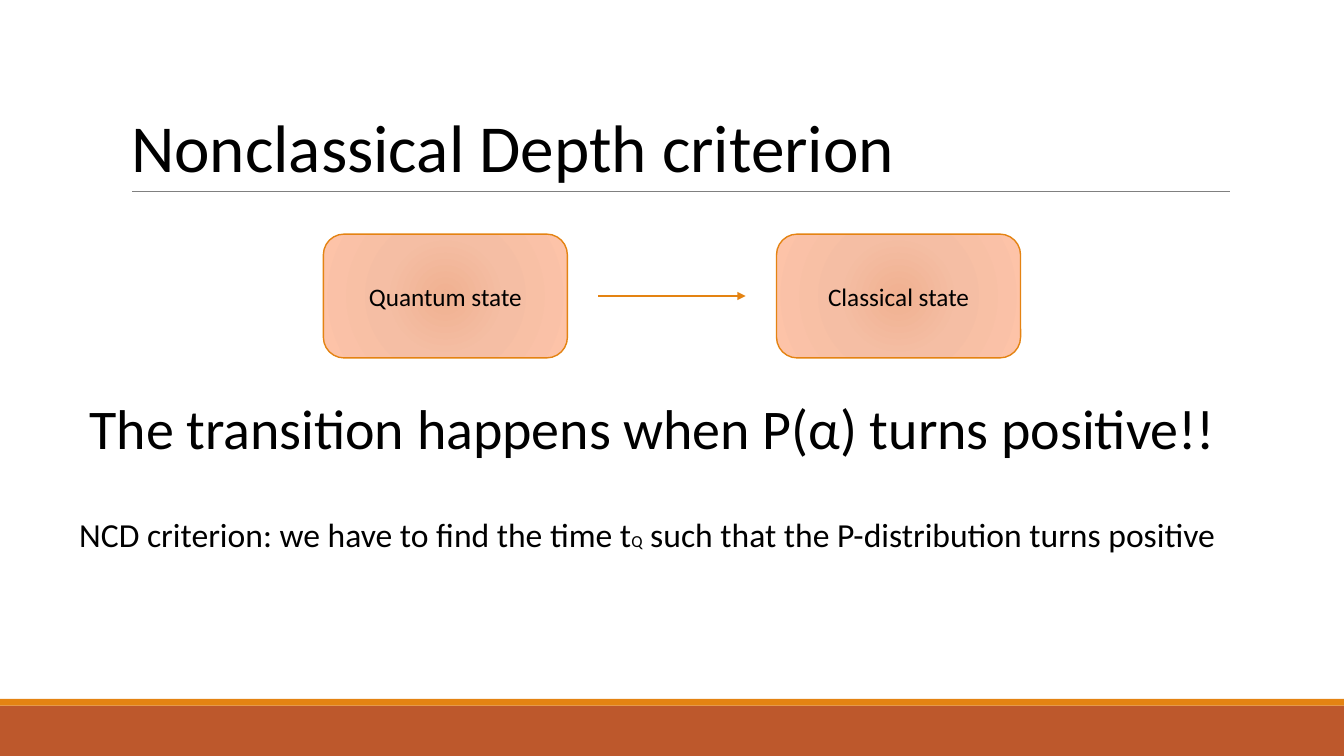
"""Build the slide on the nonclassical depth criterion."""
from pptx import Presentation
from pptx.dml.color import RGBColor
from pptx.enum.shapes import MSO_CONNECTOR, MSO_SHAPE
from pptx.enum.text import MSO_ANCHOR, PP_ALIGN
from pptx.oxml import parse_xml
from pptx.oxml.ns import nsdecls, qn
from pptx.oxml.xmlchemy import OxmlElement
from pptx.util import Cm, Pt

TITLE = "Nonclassical Depth criterion"
STATES = ["Quantum state", "Classical state"]
STATEMENTS = [
    ((1.9, 9.8, 29.09, 1.96), True,
     [("The transition happens when P(α) turns positive!!", 40)]),
    ((1.63, 12.83, 29.36, 1.27), False,
     [("NCD criterion: we have to find the time t", 24),
      ("Q", 12),
      (" such that the P-distribution turns positive", 24)]),
]

BLACK = RGBColor(0x00, 0x00, 0x00)
GRAY = RGBColor(0x80, 0x80, 0x80)
ORANGE = RGBColor(0xE4, 0x83, 0x12)
RUST = RGBColor(0xBD, 0x58, 0x2C)
GLOW = [(0, RGBColor(0xF0, 0xB1, 0x91)),
        (45, RGBColor(0xF5, 0xBE, 0xA4)),
        (100, RGBColor(0xFD, 0xC3, 0xA8))]
FONT = "Calibri"

WIDTH, HEIGHT = 33.87, 19.05
FOOTER_TOP, STRIPE_HEIGHT = 17.78, 0.17
STATE_LEFT, STATE_TOP, STATE_WIDTH, STATE_HEIGHT = 8.15, 5.9, 6.15, 3.12
STATE_STEP, ARROW_GAP = 11.42, 0.78


def add_text(para, text, size):
    """Add one run of text to a paragraph."""
    span = para.add_run()
    span.text = text
    span.font.name = FONT
    span.font.size = Pt(size)
    span.font.color.rgb = BLACK


def add_bar(slide, top, height, color):
    """Add a full-width bar."""
    bar = slide.shapes.add_shape(
        MSO_SHAPE.RECTANGLE, 0, Cm(top), Cm(WIDTH), Cm(height))
    bar.shadow.inherit = False
    bar.fill.solid()
    bar.fill.fore_color.rgb = color
    bar.line.fill.background()


def add_line(slide, left, right, height, color, weight):
    """Add a horizontal line without a shadow."""
    line = slide.shapes.add_connector(
        MSO_CONNECTOR.STRAIGHT, Cm(left), Cm(height), Cm(right), Cm(height))
    line.line.color.rgb = color
    line.line.width = Pt(weight)
    line._element.spPr.append(OxmlElement("a:effectLst"))
    return line


def add_state(slide, left, name):
    """Add a rounded box with a radial gradient."""
    box = slide.shapes.add_shape(
        MSO_SHAPE.ROUNDED_RECTANGLE, Cm(left), Cm(STATE_TOP),
        Cm(STATE_WIDTH), Cm(STATE_HEIGHT))
    box.shadow.inherit = False
    box.line.color.rgb = ORANGE
    box.line.width = Pt(1)
    box.fill.gradient()
    stops = "".join(
        f'<a:gs pos="{place * 1000}"><a:srgbClr val="{color}"/></a:gs>'
        for place, color in GLOW)
    properties = box._element.spPr
    properties.replace(properties.find(qn("a:gradFill")), parse_xml(
        f'<a:gradFill {nsdecls("a")} rotWithShape="1"><a:gsLst>{stops}</a:gsLst>'
        '<a:path path="circle"><a:fillToRect l="100000" t="100000" '
        'r="100000" b="100000"/></a:path></a:gradFill>'))
    box.text_frame.vertical_anchor = MSO_ANCHOR.MIDDLE
    para = box.text_frame.paragraphs[0]
    para.alignment = PP_ALIGN.CENTER
    add_text(para, name, 18)


def add_statement(slide, place, wraps, spans):
    """Add a centred line of text."""
    box = slide.shapes.add_textbox(*map(Cm, place))
    box.text_frame.word_wrap = wraps
    para = box.text_frame.paragraphs[0]
    para.alignment = PP_ALIGN.CENTER
    for text, size in spans:
        add_text(para, text, size)


def main():
    """Lay out the slide and save the deck."""
    deck = Presentation()
    deck.slide_width, deck.slide_height = Cm(WIDTH), Cm(HEIGHT)
    slide = deck.slides.add_slide(deck.slide_layouts[5])

    add_bar(slide, FOOTER_TOP, HEIGHT - FOOTER_TOP, RUST)
    add_bar(slide, FOOTER_TOP - STRIPE_HEIGHT, STRIPE_HEIGHT, ORANGE)
    add_line(slide, 3.33, 31, 4.82, GRAY, 0.5)

    title = slide.shapes.title
    title.left, title.top, title.width, title.height = map(
        Cm, (3.05, 1.68, 27.94, 3.15))
    title.text_frame.vertical_anchor = MSO_ANCHOR.BOTTOM
    para = title.text_frame.paragraphs[0]
    para.alignment = PP_ALIGN.LEFT
    para.line_spacing = 0.85
    add_text(para, TITLE, 48)

    for index, name in enumerate(STATES):
        add_state(slide, STATE_LEFT + index * STATE_STEP, name)
    arrow = add_line(
        slide, STATE_LEFT + STATE_WIDTH + ARROW_GAP,
        STATE_LEFT + STATE_STEP - ARROW_GAP,
        STATE_TOP + STATE_HEIGHT / 2, ORANGE, 1)
    head = OxmlElement("a:tailEnd")
    head.set("type", "triangle")
    arrow.line._get_or_add_ln().append(head)

    for place, wraps, spans in STATEMENTS:
        add_statement(slide, place, wraps, spans)
    deck.save("out.pptx")


if __name__ == "__main__":
    main()
